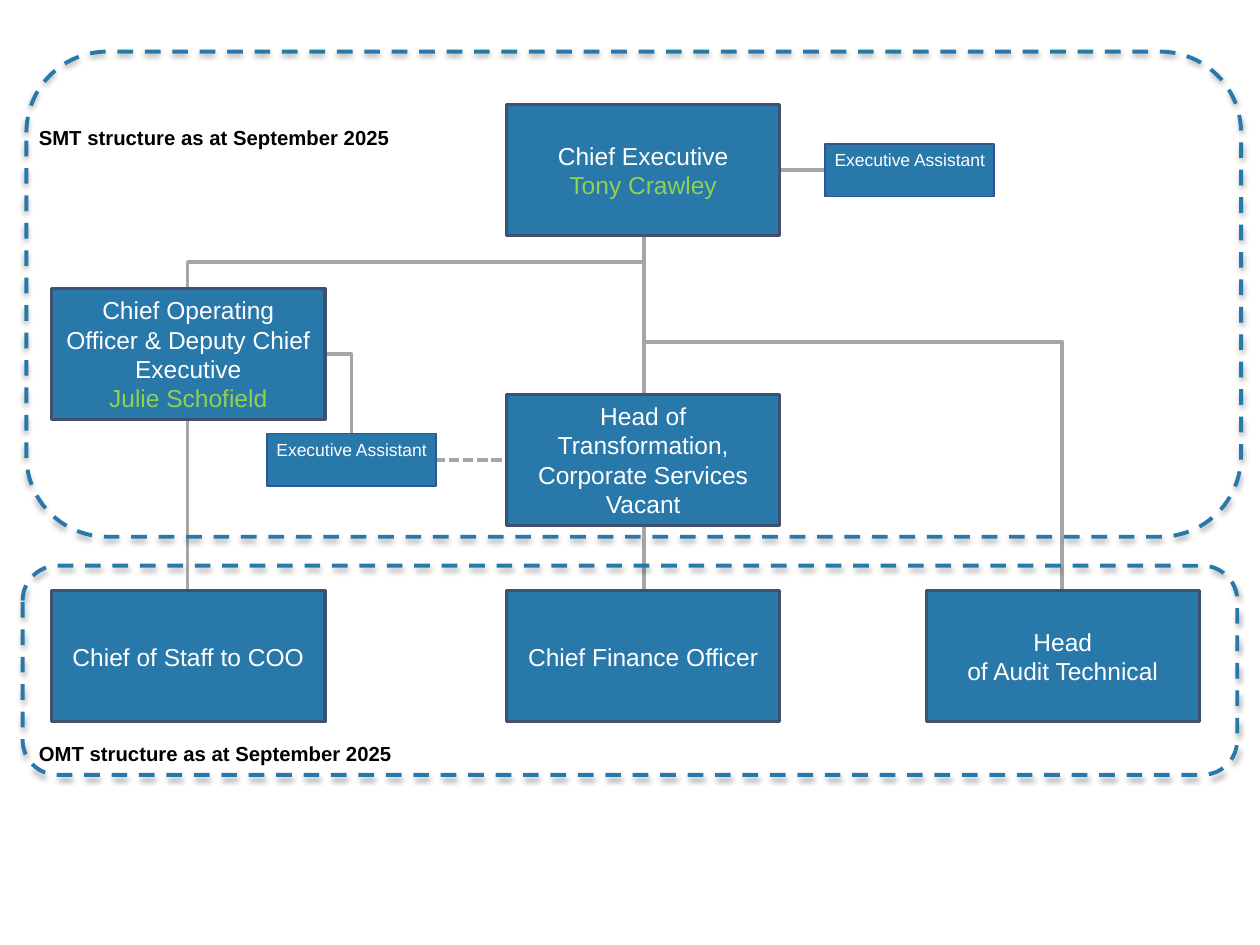
from lxml import etree
from pptx import Presentation
from pptx import util as u
from pptx.dml.color import RGBColor
from pptx.enum import dml, shapes, text
from pptx.oxml.ns import qn

COLORS = {"blue": "2878AA", "edge": "40516F", "aide_edge": "325491", "grey": "A6A6A6",
          "white": "FFFFFF", "green": "92D050", "black": "000000"}
FONT = "Arial"

# The slide is a grid of 100 columns by 75 rows of square cells.
WIDTH, HEIGHT = u.Inches(10), u.Inches(7.5)
CELL = WIDTH // 100
POST = (21.7, 10.4)
AIDE = (13.4, 4.2)
LABEL = (31.3, 2.9)


def cells(*values):
    return [round(v * CELL) for v in values]


def color(name):
    return RGBColor.from_string(COLORS[name])


def style_line(line, name, width, dash=None):
    line.color.rgb = color(name)
    line.width = u.Pt(width)
    if dash:
        line.dash_style = dash


def write(sp, lines, size, align, anchor, bold=False, spacing=None, inset=None):
    """Fill a shape with one paragraph for each (text, colour) pair."""
    tf = sp.text_frame
    tf.word_wrap = True
    tf.vertical_anchor = anchor
    if inset is not None:
        tf.margin_left = tf.margin_right = tf.margin_top = tf.margin_bottom = u.Inches(inset)
    for i, (words, name) in enumerate(lines):
        p = tf.paragraphs[0] if i == 0 else tf.add_paragraph()
        p.alignment = align
        if spacing:
            p.line_spacing = spacing
        r = p.add_run()
        r.text = words
        r.font.name, r.font.size, r.font.bold = FONT, u.Pt(size), bold
        r.font.color.rgb = color(name)


def add_box(sl, x, y, size, edge, width):
    sp = sl.shapes.add_shape(shapes.MSO_SHAPE.RECTANGLE, *cells(x, y, *size))
    sp.shadow.inherit = False
    sp.fill.solid()
    sp.fill.fore_color.rgb = color("blue")
    style_line(sp.line, edge, width)
    return sp


def add_post(sl, x, y, title, holder=None, holder_color="white"):
    lines = [(title, "white")]
    if holder:
        lines.append((holder, holder_color))
    write(add_box(sl, x, y, POST, "edge", 1.75), lines, 14,
          text.PP_ALIGN.CENTER, text.MSO_ANCHOR.MIDDLE)


def add_aide(sl, x, y):
    write(add_box(sl, x, y, AIDE, "aide_edge", 1), [("Executive Assistant", "white")], 10,
          text.PP_ALIGN.CENTER, text.MSO_ANCHOR.TOP, inset=0.04)


def add_label(sl, x, y, words):
    write(sl.shapes.add_textbox(*cells(x, y, *LABEL)), [(words, "black")], 11.6,
          text.PP_ALIGN.LEFT, text.MSO_ANCHOR.MIDDLE, bold=True, spacing=0.7)


def add_frame(sl, box):
    """Dashed rounded outline with a soft shadow below it."""
    sp = sl.shapes.add_shape(shapes.MSO_SHAPE.ROUNDED_RECTANGLE, *cells(*box))
    sp.fill.background()
    style_line(sp.line, "blue", 2.25, dml.MSO_LINE.DASH)
    effects = etree.SubElement(sp._element.spPr, qn("a:effectLst"))
    shadow = etree.SubElement(effects, qn("a:outerShdw"), blurRad=str(u.Pt(3.1)),
                              dist=str(u.Pt(1.8)), dir="5400000", rotWithShape="0")
    tint = etree.SubElement(shadow, qn("a:srgbClr"), val=COLORS["black"])
    etree.SubElement(tint, qn("a:alpha"), val="35000")


def add_link(sl, x1, y1, x2, y2, kind=shapes.MSO_CONNECTOR.STRAIGHT, dash=None):
    c = sl.shapes.add_connector(kind, *cells(x1, y1, x2, y2))
    style_line(c.line, "grey", 2, dash)
    etree.SubElement(c._element.spPr, qn("a:effectLst"))
    return c


def add_corner(sl, x1, y1, x2, y2):
    """One bend: across, then down."""
    c = add_link(sl, x1, y1, x2, y2, shapes.MSO_CONNECTOR.ELBOW)
    c._element.spPr.find(qn("a:prstGeom")).set("prst", "bentConnector2")


def add_branch(sl, x1, y1, x2, y2, bend=0.5):
    """Two bends: down, across at the share `bend` of the drop, then down."""
    mid_x, mid_y = (x1 + x2) / 2, (y1 + y2) / 2
    half_w, half_h = (y2 - y1) / 2, abs(x2 - x1) / 2
    side = 1 if x2 > x1 else -1
    c = add_link(sl, mid_x + side * half_w, mid_y - half_h,
                 mid_x - side * half_w, mid_y + half_h, shapes.MSO_CONNECTOR.ELBOW)
    c._element.spPr.find(qn("a:xfrm")).set("rot", str((270 if side > 0 else 90) * 60000))
    c.adjustments if hasattr(c, "adjustments") else None
    guides = c._element.spPr.find(qn("a:prstGeom")).get_or_add_avLst()
    etree.SubElement(guides, qn("a:gd"), name="adj1", fmla=f"val {round(bend * 100000)}")


def reporting_lines(sl, box):
    x, y, w, h = box
    left, middle, right = x + 14.9, x + 51.1, x + 84.3
    chief, staff = y + 18.7, y + 46.9
    add_link(sl, left, y + 33.3, left, staff)
    add_link(sl, middle, y + 41.7, middle, staff)
    add_corner(sl, x + 25.7, y + 28.1, x + 27.9, y + 34.4)
    add_link(sl, x + 34.5, y + 36.5, x + 40.2, y + 36.5, dash=dml.MSO_LINE.SQUARE_DOT)
    add_branch(sl, middle, chief, left, y + 22.9)
    add_link(sl, middle, chief, middle, y + 31.3)
    add_branch(sl, middle, chief, right, staff, bend=0.3)
    add_link(sl, x + 61.9, y + 13.5, x + 65.5, y + 13.5)


def senior_team(sl, box):
    x, y, w, h = box
    add_label(sl, x, y + 5.6, "SMT structure as at September 2025")
    add_post(sl, x + 38.1, y + 4.2, "Chief Executive", "Tony Crawley", "green")
    add_post(sl, x + 2, y + 18.8, "Chief Operating Officer & Deputy Chief Executive",
             "Julie Schofield", "green")
    add_post(sl, x + 38.1, y + 27.2, "Head of Transformation, Corporate Services", "Vacant")
    add_aide(sl, x + 63.4, y + 7.3)
    add_aide(sl, x + 19.1, y + 30.3)
    add_frame(sl, box)


def operational_team(sl, box):
    x, y, w, h = box
    posts = [(2.3, "Chief of Staff to COO", None),
             (38.4, "Chief Finance Officer", None),
             (71.7, "Head", "of Audit Technical")]
    for dx, title, more in posts:
        add_post(sl, x + dx, y + 2, title, more)
    add_frame(sl, box)
    add_label(sl, x + 0.3, y + 13.7, "OMT structure as at September 2025")


def main():
    prs = Presentation()
    prs.slide_width, prs.slide_height = WIDTH, HEIGHT
    sl = prs.slides.add_slide(prs.slide_layouts[6])
    reporting_lines(sl, (0, 0, 100, 75))
    senior_team(sl, (2.1, 4.1, 96.4, 38.5))
    operational_team(sl, (1.8, 44.9, 96.4, 16.6))
    prs.save("out.pptx")


if __name__ == "__main__":
    main()
